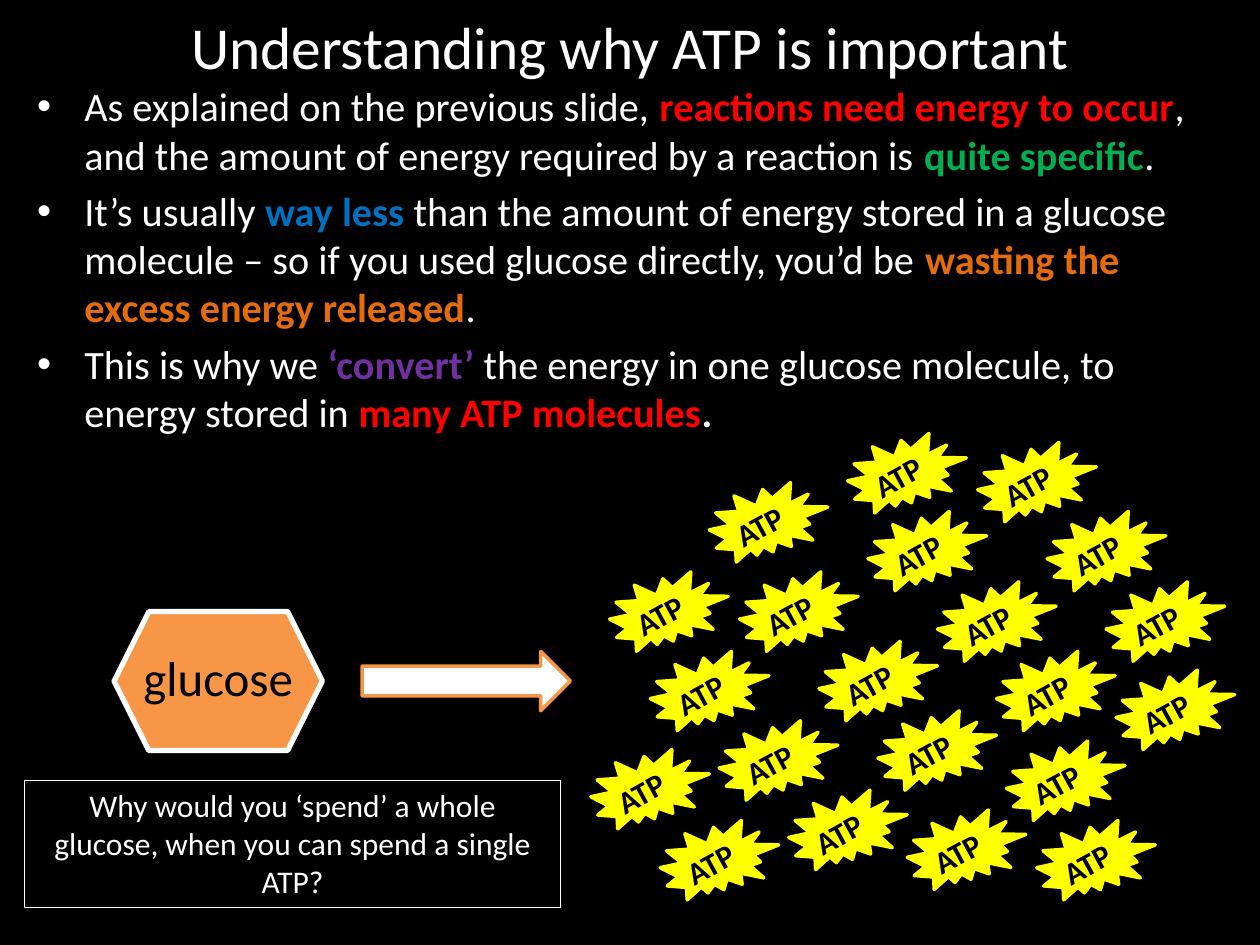
from dataclasses import dataclass
from typing import NamedTuple

import pptx
import pptx.dml.color
import pptx.enum.shapes
import pptx.enum.text
import pptx.oxml
import pptx.util
from pptx.util import Cm

KIND = pptx.enum.shapes.MSO_SHAPE
ALIGN = pptx.enum.text.PP_ALIGN
ANCHOR = pptx.enum.text.MSO_ANCHOR


@dataclass(frozen=True)
class Theme:
    font: str = "Calibri"
    black: str = "000000"
    white: str = "FFFFFF"
    red: str = "FF0000"
    green: str = "00B050"
    blue: str = "0070C0"
    rust: str = "E46C0A"
    purple: str = "7030A0"
    orange: str = "F79646"
    yellow: str = "FFFF00"
    title: int = 34
    body: int = 23
    sugar: int = 28
    small: int = 18


class Box(NamedTuple):
    left: float
    top: float
    width: float
    height: float


class Run(NamedTuple):
    text: str
    tint: str = ""
    bold: bool = False


class Spot(NamedTuple):
    left: float
    top: float


LOOK = Theme()

POINTS = [
    [Run("As explained on the previous slide, "),
     Run("reactions need energy to occur", LOOK.red, True),
     Run(", and the amount of energy required by a reaction is "),
     Run("quite specific", LOOK.green, True),
     Run(".")],
    [Run("It’s usually "),
     Run("way less ", LOOK.blue, True),
     Run("than the amount of energy stored in a glucose molecule – "
         "so if you used glucose directly, you’d be "),
     Run("wasting the excess energy released", LOOK.rust, True),
     Run(".")],
    [Run("This is why we "),
     Run("‘convert’ ", LOOK.purple, True),
     Run("the energy in one glucose molecule, to energy stored in "),
     Run("many ATP molecules", LOOK.red, True),
     Run(".", bold=True)],
]

# Top left corner of each ATP burst, in cm
SPOTS = [Spot(*pair) for pair in (
    (12.29, 11.53), (13.11, 13.13), (14.91, 11.53), (17.09, 8.74),
    (17.5, 10.31), (19.71, 8.92), (21.11, 10.31), (18.9, 11.73),
    (16.51, 12.93), (14.5, 14.53), (11.91, 15.11), (13.31, 16.54),
    (15.9, 15.93), (17.7, 14.33), (20.09, 13.13), (22.3, 11.73),
    (22.5, 13.51), (20.29, 14.94), (18.29, 16.33), (20.9, 16.54),
    (14.3, 9.73),
)]


def paint(code: str) -> pptx.dml.color.RGBColor:
    return pptx.dml.color.RGBColor.from_string(code)


def place(box: Box) -> list[Cm]:
    return [Cm(side) for side in box]


def write(shape, text: str | list[list[Run]], *, size: int,
          tint: str = LOOK.white, bold: bool = False, align=ALIGN.CENTER,
          anchor=ANCHOR.TOP, wrap: bool = True, bullet: bool = False) -> None:
    """Fill a shape with plain text, or with paragraphs of runs."""
    frame = shape.text_frame
    frame.word_wrap = wrap
    frame.vertical_anchor = anchor
    parts = [[Run(text, tint, bold)]] if isinstance(text, str) else text
    for rank, runs in enumerate(parts):
        para = frame.add_paragraph() if rank else frame.paragraphs[0]
        para.alignment = align
        if bullet:
            para.space_before = pptx.util.Pt(size * 0.2)
            props = para._p.get_or_add_pPr()
            props.set("marL", str(Cm(0.95)))
            props.set("indent", str(Cm(-0.95)))
            for tag, key, value in (("buFont", "typeface", "Arial"),
                                    ("buChar", "char", "•")):
                mark = props.makeelement(pptx.oxml.ns.qn(f"a:{tag}"), {key: value})
                props.append(mark)
        for part in runs:
            run = para.add_run()
            run.text = part.text
            run.font.name = LOOK.font
            run.font.size = pptx.util.Pt(size)
            run.font.bold = part.bold
            run.font.color.rgb = paint(part.tint or tint)


def draw(shapes, kind, box: Box, *, fill: str = "", line: str, width: float):
    shape = shapes.add_shape(kind, *place(box))
    shape.shadow.inherit = False
    if fill:
        shape.fill.solid()
        shape.fill.fore_color.rgb = paint(fill)
    else:
        shape.fill.background()
    shape.line.color.rgb = paint(line)
    shape.line.width = pptx.util.Pt(width)
    return shape


def label(shapes, box: Box, text: str | list[list[Run]], **form):
    shape = shapes.add_textbox(*place(box))
    write(shape, text, **form)
    return shape


def burst(shapes, spot: Spot) -> None:
    group = shapes.add_group_shape().shapes
    draw(group, KIND.EXPLOSION2, Box(*spot, 2.39, 1.6),
         fill=LOOK.yellow, line=LOOK.yellow, width=2)
    name = label(group, Box(spot.left + 0.13, spot.top + 0.36, 1.75, 1.02), "ATP",
                 size=LOOK.small, tint=LOOK.black, bold=True, wrap=False)
    name.rotation = 331.4


def main() -> None:
    deck = pptx.Presentation()
    deck.slide_width, deck.slide_height = Cm(25.4), Cm(19.05)
    slide = deck.slides.add_slide(deck.slide_layouts[6])
    slide.background.fill.solid()
    slide.background.fill.fore_color.rgb = paint(LOOK.black)
    shapes = slide.shapes

    # Title and points
    label(shapes, Box(1.27, 0.53, 22.86, 0.79), "Understanding why ATP is important",
          size=LOOK.title, anchor=ANCHOR.MIDDLE)
    label(shapes, Box(0.5, 1.52, 24.41, 16.99), POINTS,
          size=LOOK.body, align=ALIGN.LEFT, bullet=True)

    # Glucose turns into ATP
    draw(shapes, KIND.HEXAGON, Box(2.3, 12.33, 4.2, 2.8),
         fill=LOOK.orange, line=LOOK.white, width=3)
    label(shapes, Box(2.3, 12.93, 4.2, 1.45), "glucose",
          size=LOOK.sugar, tint=LOOK.black)
    draw(shapes, KIND.RIGHT_ARROW, Box(7.3, 13.13, 4.2, 1.2),
         fill=LOOK.white, line=LOOK.orange, width=2)
    for spot in SPOTS:
        burst(shapes, spot)

    # Closing question
    ask = draw(shapes, KIND.RECTANGLE, Box(0.5, 15.73, 10.8, 2.56),
               line=LOOK.white, width=0.75)
    write(ask, "Why would you ‘spend’ a whole glucose, when you can spend a single ATP?",
          size=LOOK.small)

    deck.save("out.pptx")


if __name__ == "__main__":
    main()
